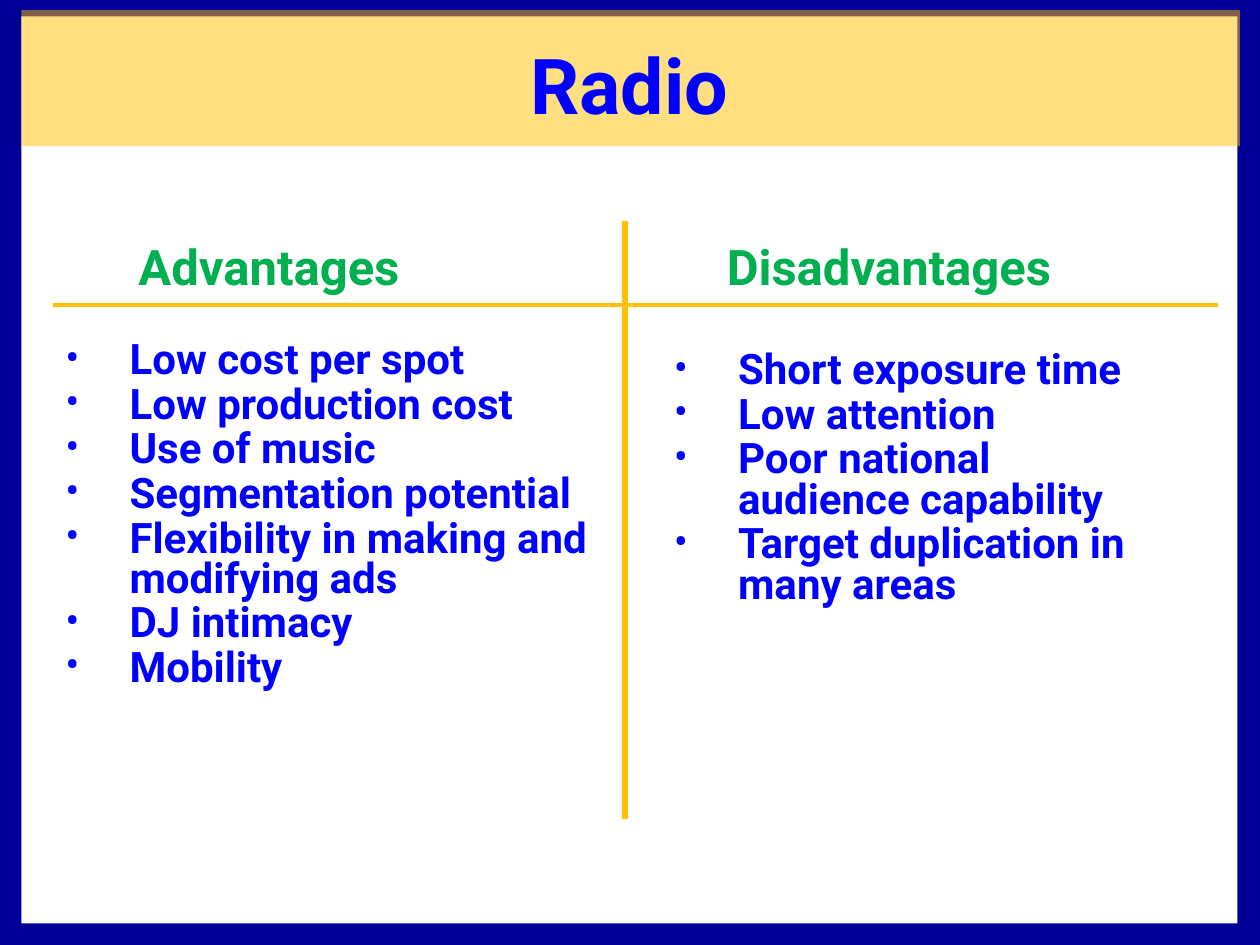
import pptx
import pptx.util
import pptx.dml.color
import pptx.enum.shapes
import pptx.enum.text
import pptx.oxml
import pptx.oxml.ns
import lxml.etree

Inches = pptx.util.Inches
Pt = pptx.util.Pt
ALIGN = pptx.enum.text.PP_ALIGN
ANCHOR = pptx.enum.text.MSO_ANCHOR

# Content
TITLE = "Radio"
COLUMNS = [
    {
        "heading": "Advantages",
        "heading_at": (1, 1.83, 2.49, 0.57),
        "points": [
            "Low cost per spot",
            "Low production cost",
            "Use of music",
            "Segmentation potential",
            "Flexibility in making and modifying ads",
            "DJ intimacy",
            "Mobility",
        ],
        "points_at": (0.42, 2.67, 4.42, 4.08),
    },
    {
        "heading": "Disadvantages",
        "heading_at": (5.67, 1.83, 3.07, 0.57),
        "points": [
            "Short exposure time",
            "Low attention",
            "Poor national audience capability",
            "Target duplication in many areas",
        ],
        "points_at": (5.25, 2.75, 4.08, 3.33),
    },
]
# Dividers: start, end, width in points
DIVIDERS = [((4.96, 1.75), (4.96, 6.5), 3), ((0.42, 2.42), (9.67, 2.42), 2.25)]

# Style
COLORS = {
    "frame": "000099",
    "panel": "FFFFFF",
    "gold": "FFC000",
    "text": "0000FF",
    "heading": "00B050",
}
FONT = "Roboto"
INDENT = Inches(0.51)
POINT_FORMAT = {"line_spacing": 0.8, "space_before": Pt(2.4)}


def color(name):
    return pptx.dml.color.RGBColor.from_string(COLORS[name])


def lengths(values):
    return [Inches(value) for value in values]


def add_panel(page, at, fill):
    panel = page.shapes.add_shape(pptx.enum.shapes.MSO_SHAPE.RECTANGLE, *lengths(at))
    panel.shadow.inherit = False
    panel.fill.solid()
    panel.fill.fore_color.rgb = color(fill)
    panel.line.fill.background()
    return panel


def add_span(para, text, size, color_name):
    span = para.add_run()
    span.text = text
    for name, value in {"name": FONT, "size": Pt(size), "bold": True}.items():
        setattr(span.font, name, value)
    span.font.color.rgb = color(color_name)


def add_box(page, at, wrap):
    box = page.shapes.add_textbox(*lengths(at))
    box.text_frame.word_wrap = wrap
    return box.text_frame


def add_bullet(para):
    properties = para._p.get_or_add_pPr()
    properties.set("marL", str(INDENT))
    properties.set("indent", str(-INDENT))
    namespace = pptx.oxml.ns.nsdecls("a")
    for markup in (
        f'<a:buClr {namespace}><a:srgbClr val="{COLORS["text"]}"/></a:buClr>',
        f'<a:buFont {namespace} typeface="{FONT}"/>',
        f'<a:buChar {namespace} char="•"/>',
    ):
        properties.append(pptx.oxml.parse_xml(markup))


def add_points(page, at, points):
    frame = add_box(page, at, True)
    for index, point in enumerate(points):
        para = frame.add_paragraph() if index else frame.paragraphs[0]
        for name, value in POINT_FORMAT.items():
            setattr(para, name, value)
        add_bullet(para)
        add_span(para, point, 24, "text")


def add_divider(page, start, end, width):
    divider = page.shapes.add_connector(
        pptx.enum.shapes.MSO_CONNECTOR.STRAIGHT, *lengths(start + end)
    )
    divider.line.color.rgb = color("gold")
    divider.line.width = Pt(width)
    lxml.etree.SubElement(
        divider.element.spPr, pptx.oxml.ns.qn("a:effectLst")
    )


def main():
    deck = pptx.Presentation()
    deck.slide_width, deck.slide_height = lengths((10, 7.5))
    page = deck.slides.add_slide(deck.slide_layouts[5])

    # Blue frame around a white panel
    page.background.fill.solid()
    page.background.fill.fore_color.rgb = color("frame")
    add_panel(page, (0.17, 0.13, 9.65, 7.2), "panel")

    # Half-transparent title band
    band = add_panel(page, (0.17, 0.08, 9.67, 1.08), "gold")
    shade = band.element.spPr.find(".//" + pptx.oxml.ns.qn("a:srgbClr"))
    lxml.etree.SubElement(shade, pptx.oxml.ns.qn("a:alpha")).set("val", "50000")

    # Title, raised above the band
    title = page.shapes.title
    title.element.getparent().append(title.element)
    title.left, title.top, title.width, title.height = lengths((0.33, 0.08, 9.33, 1.17))
    title.text_frame.word_wrap = False
    title.text_frame.vertical_anchor = ANCHOR.MIDDLE
    para = title.text_frame.paragraphs[0]
    para.alignment = ALIGN.CENTER
    add_span(para, TITLE, 44, "text")

    # Columns and the lines between them
    for column in COLUMNS:
        add_points(page, column["points_at"], column["points"])
    for start, end, width in DIVIDERS:
        add_divider(page, start, end, width)
    for column in COLUMNS:
        heading = add_box(page, column["heading_at"], False)
        add_span(heading.paragraphs[0], column["heading"], 28, "heading")

    deck.save("out.pptx")


if __name__ == "__main__":
    main()
